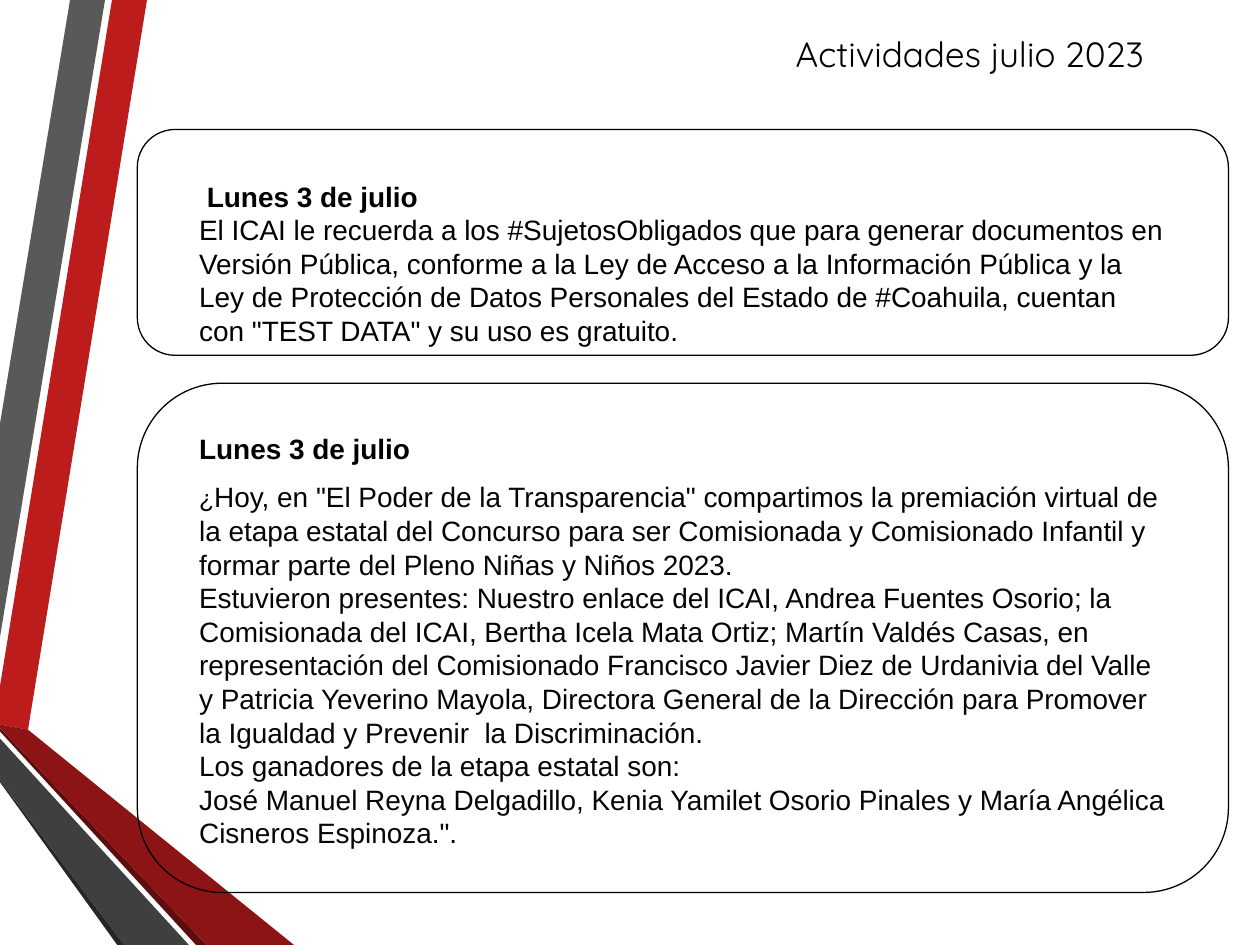
from pptx import Presentation
from pptx import util as u
from pptx.dml import color
from pptx.enum import shapes, text

Pt = u.Pt

theme = {
    "red": "BC1C1C", "gray": "595959", "black_edge": "262626",
    "red_edge": "5E0D0E", "dark_red": "8D1415", "dark_gray": "3F3F3F",
    "ink": "000000", "body": "050505",
    "title_font": "Quicksand", "text_font": "Arial",
    "title_size": 20, "text_size": 16, "mark_size": 14,
}


def set_font(span, ink="ink", **changes):
    values = {"name": theme["text_font"], "size": Pt(theme["text_size"]),
              "bold": False, **changes}
    for name, value in values.items():
        setattr(span.font, name, value)
    span.font.color.rgb = color.RGBColor.from_string(theme[ink])


def fill_frame(box, paragraphs, align=text.PP_ALIGN.LEFT):
    """Write paragraphs, each a list of (words, font changes)."""
    frame = box.text_frame
    layout = {"word_wrap": True, "auto_size": text.MSO_AUTO_SIZE.NONE,
              "vertical_anchor": text.MSO_ANCHOR.TOP,
              "margin_left": Pt(7.2), "margin_right": Pt(7.2),
              "margin_top": Pt(3.6), "margin_bottom": Pt(3.6)}
    for name, value in layout.items():
        setattr(frame, name, value)
    for index, spans in enumerate(paragraphs):
        para = frame.add_paragraph() if index else frame.paragraphs[0]
        para.alignment = align
        for words, changes in spans:
            span = para.add_run()
            span.text = words
            set_font(span, **changes)


deck = Presentation()
deck.slide_width, deck.slide_height = Pt(720), Pt(540)
page = deck.slides.add_slide(deck.slide_layouts[5])

# Ribbons along the left edge
ribbons = [
    ("red", [(0, 391.5), (0, 414), (16, 417), (84.5, 0), (64, 0)]),
    ("gray", [(60, 0), (39.5, 0), (0, 242), (0, 364)]),
    ("black_edge", [(0, 445.5), (0, 447), (67, 540), (71, 540)]),
    ("red_edge", [(0, 416.5), (0, 418), (112.5, 540), (117.5, 540)]),
    ("dark_red", [(0, 416.5), (117.5, 540), (168, 540), (16, 417), (0, 414)]),
    ("dark_gray", [(0, 445.5), (71, 540), (108.5, 540), (0, 422)]),
]
for tone, points in ribbons:
    builder = page.shapes.build_freeform(*points[0], scale=Pt(1))
    builder.add_line_segments(points[1:], close=True)
    ribbon = builder.convert_to_shape()
    ribbon.shadow.inherit = False
    ribbon.fill.solid()
    ribbon.fill.fore_color.rgb = color.RGBColor.from_string(theme[tone])
    ribbon.line.fill.background()

# Title
title = page.shapes.title
for name, value in {"left": 405.5, "top": 15, "width": 297.5, "height": 31.5}.items():
    setattr(title, name, Pt(value))
title_style = {"name": theme["title_font"], "size": Pt(theme["title_size"])}
fill_frame(title, [[("Actividades julio 2023", title_style)]], text.PP_ALIGN.CENTER)

# Rounded frames around the two entries
for top, height in [(74, 129), (219, 291)]:
    frame_box = page.shapes.add_shape(
        shapes.MSO_SHAPE.FLOWCHART_ALTERNATE_PROCESS,
        Pt(78.5), Pt(top), Pt(623.5), Pt(height))
    frame_box.shadow.inherit = False
    frame_box.fill.background()
    frame_box.line.width = Pt(0.75)
    frame_box.line.color.rgb = color.RGBColor.from_string(theme["ink"])

# Entry texts
heading = {"bold": True}
body = {"ink": "body"}
entries = [
    (98.75, 104.5, [
        [(" Lunes 3 de julio", heading)],
        [("El ICAI le recuerda a los #SujetosObligados que para generar documentos en "
          "Versión Pública, conforme a la Ley de Acceso a la Información Pública y la "
          "Ley de Protección de Datos Personales del Estado de #Coahuila, cuentan "
          "con \"TEST DATA\" y su uso es gratuito.", {})],
    ]),
    (242.75, 46, [[("Lunes 3 de julio", heading)]]),
    (270.75, 220.5, [
        [("¿", {**body, "size": Pt(theme["mark_size"])}),
         ("Hoy, en \"El Poder de la Transparencia\" compartimos la premiación virtual de "
          "la etapa estatal del Concurso para ser Comisionada y Comisionado Infantil y "
          "formar parte del Pleno Niñas y Niños 2023.", body)],
        [("Estuvieron presentes: Nuestro enlace del ICAI, Andrea Fuentes Osorio; la "
          "Comisionada del ICAI, Bertha Icela Mata Ortiz; Martín Valdés Casas, en "
          "representación del Comisionado Francisco Javier Diez de Urdanivia del Valle "
          "y Patricia Yeverino Mayola, Directora General de la Dirección para Promover "
          "la Igualdad y Prevenir  la Discriminación.", body)],
        [("Los ganadores de la etapa estatal son:", body)],
        [("José Manuel Reyna Delgadillo, Kenia Yamilet Osorio Pinales y María Angélica "
          "Cisneros Espinoza.\".", body)],
    ]),
]
for top, height, paragraphs in entries:
    box = page.shapes.add_textbox(Pt(106.75), Pt(top), Pt(567.5), Pt(height))
    fill_frame(box, paragraphs)

deck.save("out.pptx")
